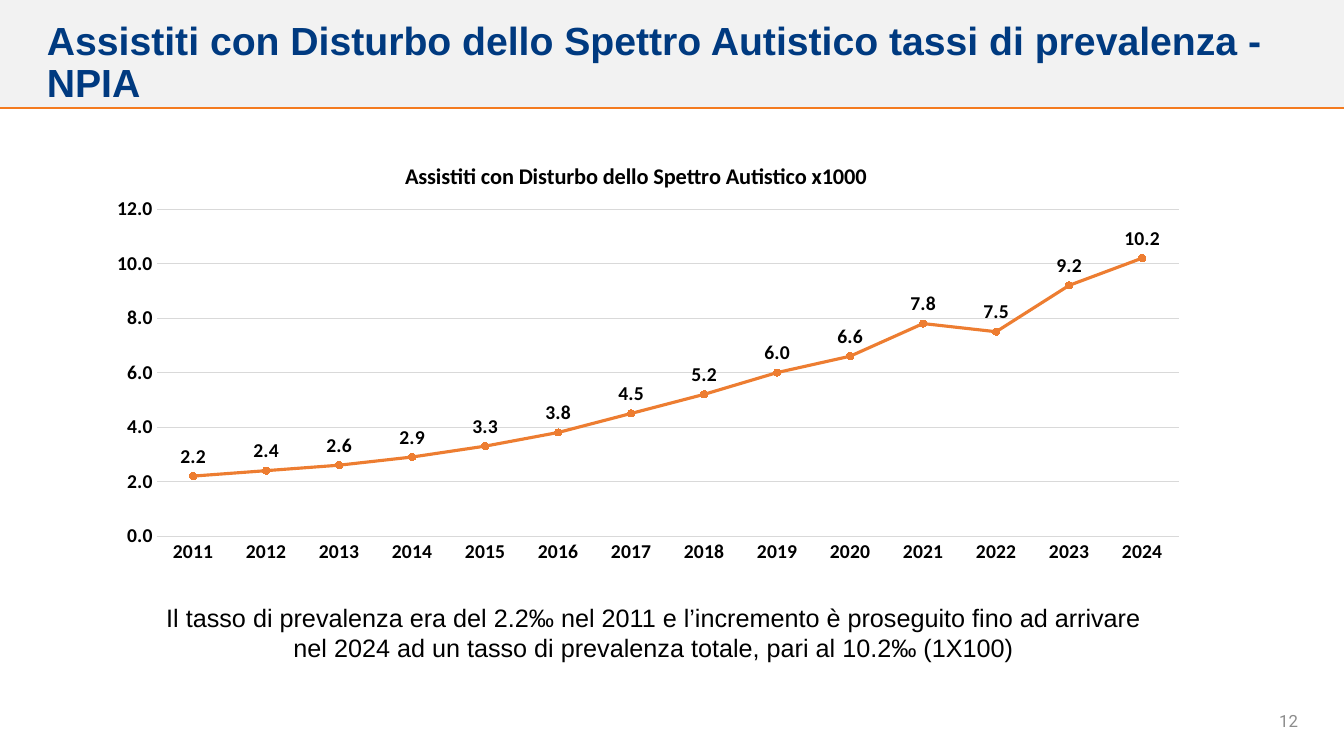
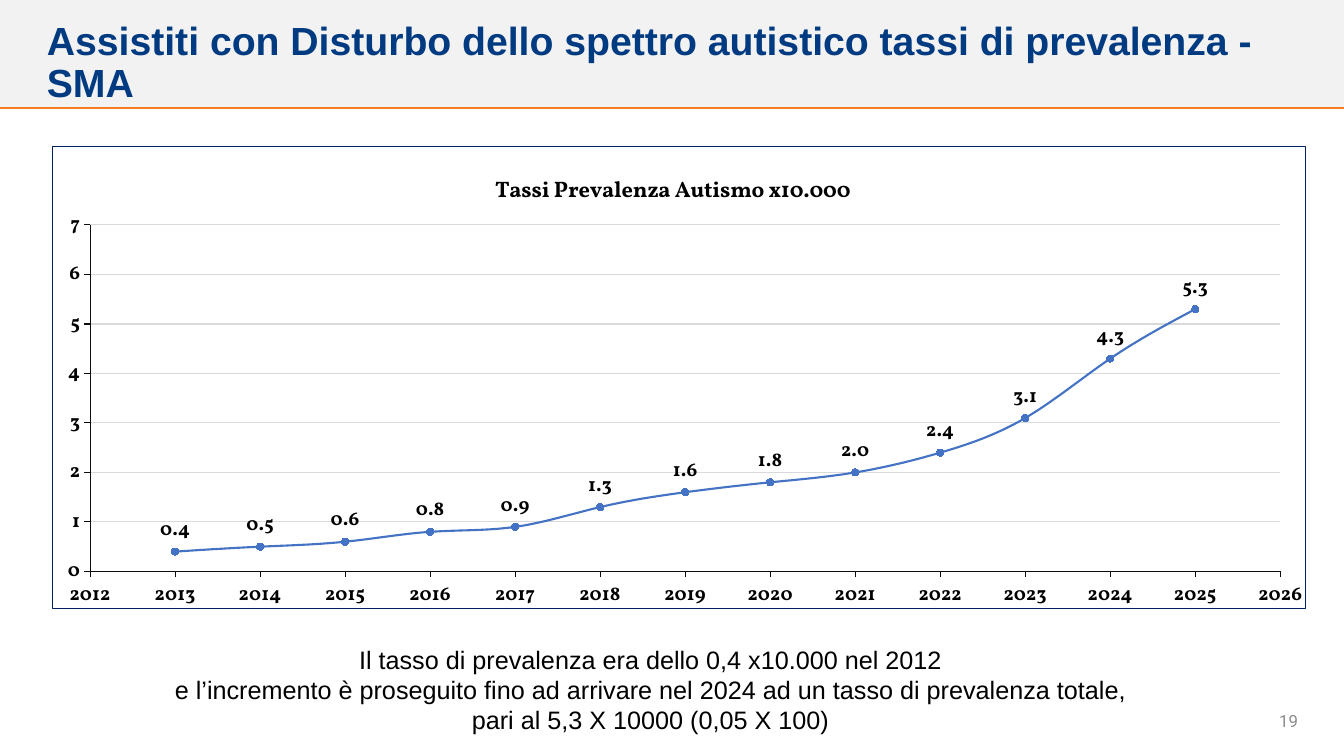
import pptx
import pptx.chart.data
import pptx.chart.datalabel
import pptx.dml.color
import pptx.enum.chart
import pptx.enum.shapes
import pptx.enum.text
import pptx.oxml
import pptx.oxml.ns
import pptx.util

EMU_PER_PX = 914400 / 100.8
COLORS = {
    "band": "F2F2F2",
    "rule": "F47B20",
    "title": "003A80",
    "number": "8C8C8C",
    "text": "000000",
    "grid": "D9D9D9",
    "axis": "0D0D0D",
    "orange": "ED7D31",
    "blue": "4472C4",
    "background": "FFFFFF",
    "frame": "002060",
}
ALIGN = pptx.enum.text.PP_ALIGN
ANCHOR = pptx.enum.text.MSO_ANCHOR
CHART_TYPE = pptx.enum.chart.XL_CHART_TYPE
TICK = pptx.enum.chart.XL_TICK_MARK


def px(length):
    return pptx.util.Emu(round(length * EMU_PER_PX))


def rgb(name):
    return pptx.dml.color.RGBColor.from_string(COLORS[name])


def set_font(font, name, size, color, bold=False):
    font.name = name
    font.size = pptx.util.Pt(size)
    font.bold = bold
    font.color.rgb = rgb(color)


def set_line(line, color, width):
    """Colour a line, or hide it when color is None."""
    if color is None:
        line.fill.background()
    else:
        line.color.rgb = rgb(color)
        line.width = pptx.util.Pt(width)


def set_layout(parent, index, **fractions):
    """Place a chart part by fractions of the chart area."""
    qn = pptx.oxml.ns.qn
    for automatic in parent.findall(qn("c:layout")):
        parent.remove(automatic)
    target = '<c:layoutTarget val="inner"/>' if "w" in fractions else ""
    modes = "".join(f'<c:{key}Mode val="edge"/>' for key in "xy")
    values = "".join(f'<c:{key} val="{value}"/>' for key, value in fractions.items())
    parent.insert(index, pptx.oxml.parse_xml(
        f'<c:layout {pptx.oxml.ns.nsdecls("c")}><c:manualLayout>'
        f"{target}{modes}{values}</c:manualLayout></c:layout>"))


class Deck:
    """Holds the shared style and the slide being built."""

    def __init__(self):
        self.presentation = pptx.Presentation()
        self.presentation.slide_width = px(1344)
        self.presentation.slide_height = px(756)
        self.slide = None

    def add_slide(self, title, number):
        self.slide = self.presentation.slides.add_slide(self.presentation.slide_layouts[6])
        self.band(0, 0, 1344, 108)
        self.rule(0, 108, 1344)
        self.text(1242, 701, 66, 40, [number], "Roboto", 12, "number",
                  align=ALIGN.RIGHT, anchor=ANCHOR.MIDDLE)
        self.text(37, 19, 1270, 90, [title], "Arial", 28, "title", bold=True,
                  anchor=ANCHOR.MIDDLE, spacing=0.9)

    def band(self, left, top, width, height):
        shape = self.slide.shapes.add_shape(
            pptx.enum.shapes.MSO_SHAPE.RECTANGLE, px(left), px(top), px(width), px(height))
        shape.shadow.inherit = False
        shape.fill.solid()
        shape.fill.fore_color.rgb = rgb("band")
        set_line(shape.line, None, 0)

    def rule(self, left, top, width):
        connector = self.slide.shapes.add_connector(
            pptx.enum.shapes.MSO_CONNECTOR.STRAIGHT,
            px(left), px(top), px(left + width), px(top))
        set_line(connector.line, "rule", 1)
        connector._element.spPr.append(pptx.oxml.parse_xml(
            f'<a:effectLst {pptx.oxml.ns.nsdecls("a")}/>'))

    def text(self, left, top, width, height, lines, font, size, color, bold=False,
             align=ALIGN.LEFT, anchor=ANCHOR.TOP, spacing=1.0):
        box = self.slide.shapes.add_textbox(px(left), px(top), px(width), px(height))
        frame = box.text_frame
        frame.word_wrap = True
        frame.vertical_anchor = anchor
        frame.text = "\n".join(lines)
        for paragraph in frame.paragraphs:
            paragraph.alignment = align
            paragraph.line_spacing = spacing
            set_font(paragraph.font, font, size, color, bold)

    def caption(self, left, top, height, lines):
        self.text(left, top, 1015, height, lines, "Arial", 18, "text", align=ALIGN.CENTER)

    def chart(self, left, top, width, height, kind, data, title, title_left, plot_area,
              font, color, line_width, value_max, value_step, value_format,
              value_line, category_line, tick, smooth):
        chart = self.slide.shapes.add_chart(
            kind, px(left), px(top), px(width), px(height), data).chart
        chart.has_legend = False
        set_font(chart.font, font, 14, "text", bold=True)

        chart.has_title = True
        heading = chart.chart_title
        heading.include_in_layout = False
        heading.text_frame.text = title
        set_font(heading.text_frame.paragraphs[0].runs[0].font, font, 16, "text", bold=True)
        set_layout(heading._element, 1, x=title_left, y=0.05)

        plot = chart.plots[0]
        plot.vary_by_categories = False
        set_layout(plot._element.getparent(), 0, **dict(zip("xywh", plot_area)))

        values = chart.value_axis
        values.minimum_scale = 0
        values.maximum_scale = value_max
        values.major_unit = value_step
        values.tick_labels.number_format = value_format
        values.tick_labels.number_format_is_linked = False
        values.has_major_gridlines = True
        set_line(values.major_gridlines.format.line, "grid", 0.75)
        chart.category_axis.has_major_gridlines = False
        for axis, line in ((values, value_line), (chart.category_axis, category_line)):
            axis.major_tick_mark = tick
            axis.minor_tick_mark = TICK.NONE
            set_line(axis.format.line, line, 0.75)
            set_font(axis.tick_labels.font, font, 14, "text", bold=True)

        series = plot.series[0]
        series._element.get_or_add_smooth().val = smooth
        set_line(series.format.line, color, line_width)
        marker = series.marker
        marker.style = pptx.enum.chart.XL_MARKER_STYLE.CIRCLE
        marker.size = 5
        marker.format.fill.solid()
        marker.format.fill.fore_color.rgb = rgb(color)
        set_line(marker.format.line, color, 0.75)

        labels = pptx.chart.datalabel.DataLabels(series._element.get_or_add_dLbls())
        labels.show_value = True
        labels.position = pptx.enum.chart.XL_LABEL_POSITION.ABOVE
        labels.number_format = "0.0"
        labels.number_format_is_linked = False
        set_font(labels.font, font, 14, "text", bold=True)
        return chart

    def frame_chart(self, chart):
        """Fill and outline the chart area."""
        text_style = chart.element.find(pptx.oxml.ns.qn("c:txPr"))
        text_style.addprevious(pptx.oxml.parse_xml(
            f'<c:spPr {pptx.oxml.ns.nsdecls("c", "a")}>'
            f'<a:solidFill><a:srgbClr val="{COLORS["background"]}"/></a:solidFill>'
            f'<a:ln w="{pptx.util.Pt(0.75)}"><a:solidFill>'
            f'<a:srgbClr val="{COLORS["frame"]}"/></a:solidFill></a:ln></c:spPr>'))


def add_npia_slide(deck):
    deck.add_slide("Assistiti con Disturbo dello Spettro Autistico tassi di prevalenza - NPIA", "12")
    title = "Assistiti con Disturbo dello Spettro Autistico x1000"
    data = pptx.chart.data.CategoryChartData()
    data.categories = [str(year) for year in range(2011, 2025)]
    data.add_series(title, [2.2, 2.4, 2.6, 2.9, 3.3, 3.8, 4.5, 5.2, 6.0, 6.6, 7.8, 7.5, 9.2, 10.2])
    deck.chart(90, 135, 1111, 436, CHART_TYPE.LINE_MARKERS, data, title, 0.28,
               (0.06, 0.17, 0.92, 0.75), "Calibri", "orange", 2.25, 12, 2, "0.0",
               value_line=None, category_line="grid", tick=TICK.NONE, smooth=False)
    deck.caption(146, 597, 72, [
        "Il tasso di prevalenza era del 2.2‰ nel 2011 e l’incremento è proseguito fino ad "
        "arrivare nel 2024 ad un tasso di prevalenza totale, pari al 10.2‰ (1X100)"])


def add_sma_slide(deck):
    deck.add_slide("Assistiti con Disturbo dello spettro autistico tassi di prevalenza - SMA", "19")
    title = "Tassi Prevalenza Autismo x10.000"
    data = pptx.chart.data.XyChartData()
    series = data.add_series(title)
    rates = [0.4, 0.5, 0.6, 0.8, 0.9, 1.3, 1.6, 1.8, 2.0, 2.4, 3.1, 4.3, 5.3]
    for year, rate in enumerate(rates, 2013):
        series.add_data_point(year, rate)
    chart = deck.chart(52, 146, 1254, 463, CHART_TYPE.XY_SCATTER_SMOOTH, data, title, 0.35,
                       (0.03, 0.17, 0.95, 0.75), "Vollkorn", "blue", 1.5, 7, 1, "#,##0",
                       value_line="axis", category_line="axis", tick=TICK.OUTSIDE, smooth=True)
    years = chart.category_axis
    years.minimum_scale = 2012
    years.maximum_scale = 2026
    years.major_unit = 1
    years.tick_labels.number_format = "0"
    years.tick_labels.number_format_is_linked = False
    deck.frame_chart(chart)
    deck.caption(143, 639, 102, [
        "Il tasso di prevalenza era dello 0,4 x10.000 nel 2012",
        "e l’incremento è proseguito fino ad arrivare nel 2024 ad un tasso di prevalenza "
        "totale, pari al 5,3 X 10000 (0,05 X 100)"])


def main():
    deck = Deck()
    add_npia_slide(deck)
    add_sma_slide(deck)
    deck.presentation.save("out.pptx")


if __name__ == "__main__":
    main()
